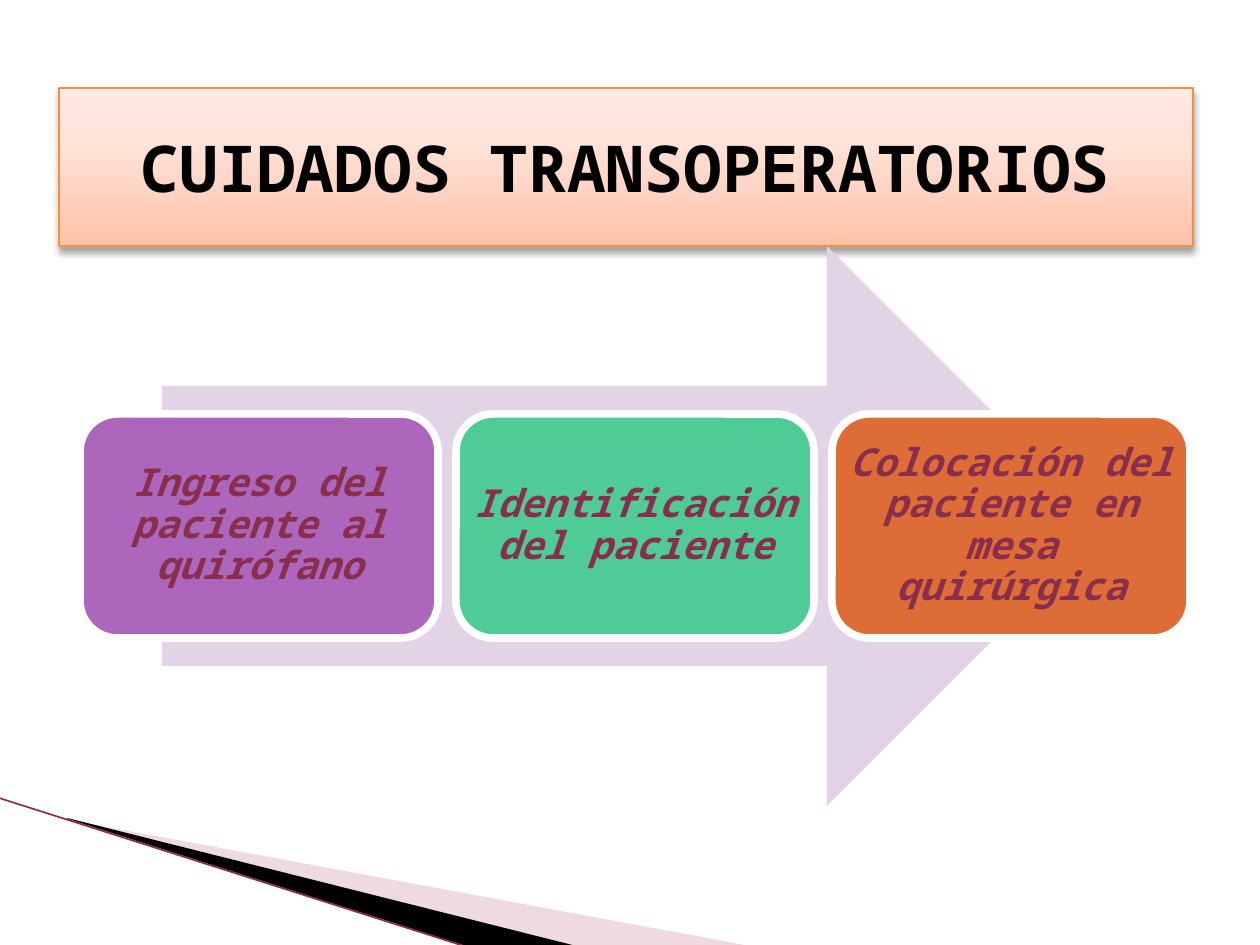
import pptx
import pptx.util
import pptx.oxml
import pptx.oxml.ns
import pptx.dml.color
import pptx.enum.shapes
import pptx.enum.text
from lxml import etree

SCALE = 914400 / 126
FONT = "Noto Sans Mono"
COLOURS = {
    "white": "FFFFFF", "black": "000000", "rose": "D8A3AF", "rose_line": "D39AA8",
    "title_line": "FA8D3D", "peach": "FFC2A9", "peach_light": "FFE2D8", "peach_pale": "FFEAE4",
    "arrow": "E3D3E7", "purple": "AC66BB", "green": "4FCC96", "orange": "DE6C36", "wine": "8A2E4E",
}
STEPS = [
    ("Ingreso del paciente al quirófano", "purple"),
    ("Identificación del paciente", "green"),
    ("Colocación del paciente en mesa quirúrgica", "orange"),
]
STEP_LEFT, STEP_PITCH = 80, 376


def px(length):
    return round(length * SCALE)


def colour(name):
    return pptx.dml.color.RGBColor.from_string(COLOURS[name])


def add_xml(parent, tag, **attributes):
    return etree.SubElement(parent, pptx.oxml.ns.qn(tag), attributes)


def add_colour_xml(parent, name, alpha=None):
    element = add_xml(parent, "a:srgbClr", val=COLOURS[name])
    if alpha is not None:
        add_xml(element, "a:alpha", val=str(alpha * 1000))


def fill_shape(shape, fill, line=None, width=0):
    shape.shadow.inherit = False
    shape.fill.solid()
    shape.fill.fore_color.rgb = colour(fill)
    if line:
        shape.line.color.rgb = colour(line)
        shape.line.width = pptx.util.Pt(width)
    else:
        shape.line.fill.background()


def write_text(shape, text, size, name, italic, inset):
    frame = shape.text_frame
    frame.text = text
    frame.word_wrap = True
    frame.auto_size = pptx.enum.text.MSO_AUTO_SIZE.NONE
    frame.vertical_anchor = pptx.enum.text.MSO_ANCHOR.MIDDLE
    frame.margin_left = frame.margin_right = px(inset)
    frame.margin_top = frame.margin_bottom = px(inset)
    paragraph = frame.paragraphs[0]
    paragraph.alignment = pptx.enum.text.PP_ALIGN.CENTER
    font = paragraph.runs[0].font
    font.name, font.size = FONT, pptx.util.Pt(size)
    font.bold, font.italic = True, italic
    font.color.rgb = colour(name)
    return paragraph


def add_wedge(slide, points, fill, alpha=None):
    builder = slide.shapes.build_freeform(*points[0], scale=SCALE)
    builder.add_line_segments(points[1:], close=True)
    shape = builder.convert_to_shape()
    fill_shape(shape, fill)
    if alpha is not None:
        solid = shape._element.spPr.find(pptx.oxml.ns.qn("a:solidFill"))
        add_xml(solid[0], "a:alpha", val=str(alpha * 1000))


def add_edge(slide, start, end):
    line = slide.shapes.add_connector(
        pptx.enum.shapes.MSO_CONNECTOR.STRAIGHT, *map(px, start + end))
    line.line.color.rgb = colour("wine")
    line.line.width = pptx.util.Pt(0.95)
    add_xml(line._element.spPr, "a:effectLst")


def format_title(title, text):
    title.left, title.top, title.width, title.height = map(px, (59, 88, 1134, 158))
    properties = title._element.spPr
    gradient = add_xml(properties, "a:gradFill", rotWithShape="1")
    stops = add_xml(gradient, "a:gsLst")
    for position, name in ((0, "peach"), (65, "peach_light"), (100, "peach_pale")):
        add_colour_xml(add_xml(stops, "a:gs", pos=str(position * 1000)), name)
    add_xml(gradient, "a:lin", ang=str(270 * 60000), scaled="0")
    title.line.color.rgb = colour("title_line")
    title.line.width = pptx.util.Pt(0.75)
    effects = add_xml(properties, "a:effectLst")
    shadow = add_xml(effects, "a:outerShdw", blurRad=str(pptx.util.Pt(4)),
                     dist=str(pptx.util.Pt(3)), dir=str(90 * 60000), rotWithShape="0")
    add_colour_xml(shadow, "black", 35)
    write_text(title, text, 36.9, "black", False, 6)


def add_arrow(slide):
    arrow = slide.shapes.add_shape(
        pptx.enum.shapes.MSO_SHAPE.RIGHT_ARROW, *map(px, (162, 246, 945, 560)))
    fill_shape(arrow, "arrow")


def add_step(slide, left, text, fill):
    step = slide.shapes.add_shape(
        pptx.enum.shapes.MSO_SHAPE.ROUNDED_RECTANGLE, *map(px, (left, 414, 358, 224)))
    fill_shape(step, fill, "white", 4.33)
    paragraph = write_text(step, text, 22, "wine", True, 0)
    paragraph.line_spacing = 0.9


def main():
    presentation = pptx.Presentation()
    presentation.slide_width, presentation.slide_height = px(1260), px(945)
    slide = presentation.slides.add_slide(presentation.slide_layouts[5])
    format_title(slide.shapes.title, "CUIDADOS TRANSOPERATORIOS")
    add_wedge(slide, [(69, 820), (750, 946), (575, 946), (69, 819)], "rose", 40)
    add_wedge(slide, [(67, 818), (576, 946), (469, 947), (68, 819)], "black")
    add_edge(slide, (-1, 798), (467, 947))
    add_arrow(slide)
    for index, (text, fill) in enumerate(STEPS):
        add_step(slide, STEP_LEFT + index * STEP_PITCH, text, fill)
    presentation.save("out.pptx")


if __name__ == "__main__":
    main()
